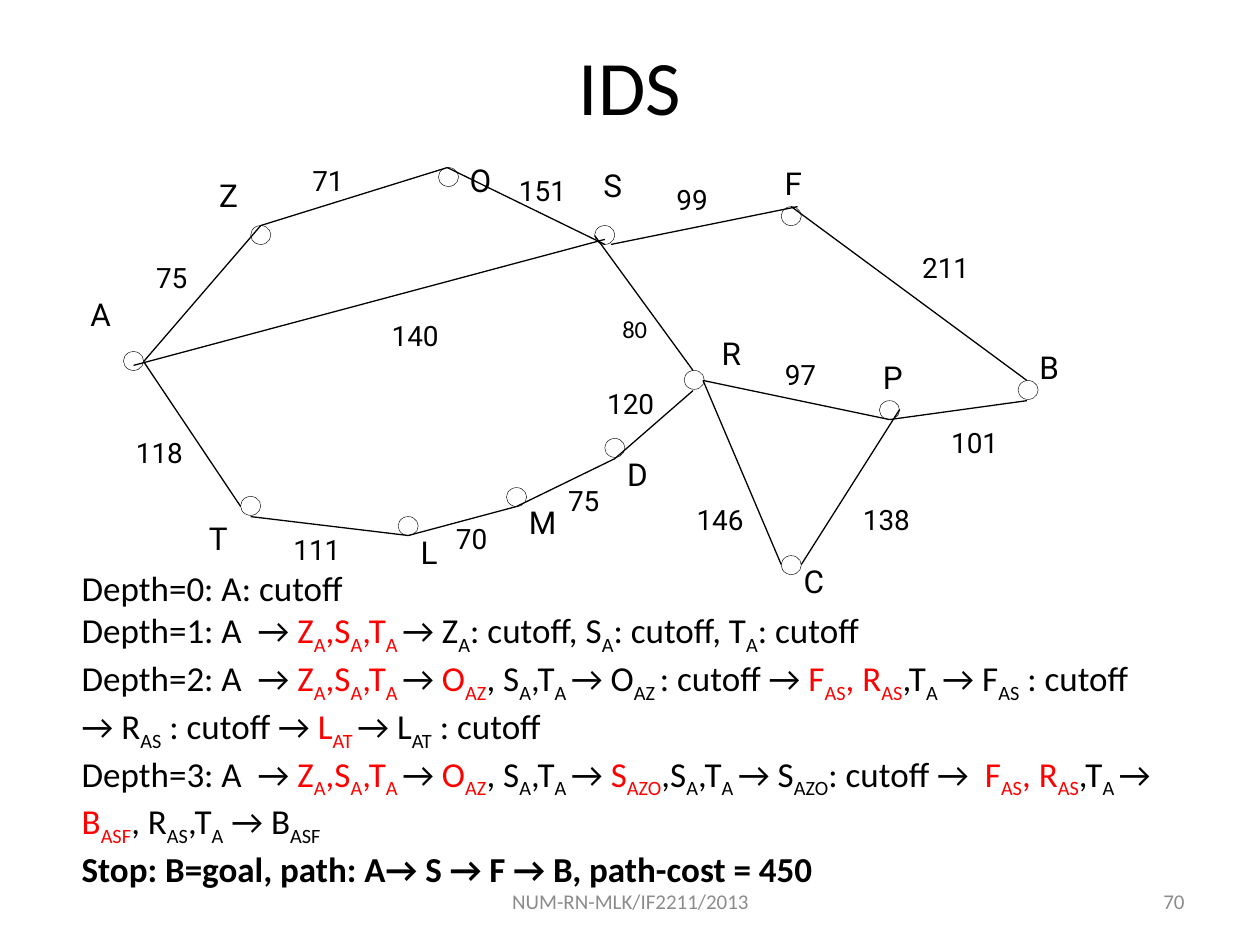
from lxml.etree import SubElement
from pptx import Presentation
from pptx.dml.color import RGBColor
from pptx.enum.shapes import MSO_CONNECTOR, MSO_SHAPE
from pptx.enum.text import MSO_ANCHOR, MSO_AUTO_SIZE, PP_ALIGN
from pptx.oxml.ns import qn
from pptx.util import Emu, Pt

PX = 9144  # 100 px to the inch
BLACK, RED, GREY = "000000", "FF0000", "8C8C8C"

# Node: circle left and top, label left and top
NODES = {
    "A": (98, 279, 62, 229),
    "T": (191, 394, 156, 407),
    "R": (543, 294, 563, 260),
    "C": (620, 441, 628, 441),
    "P": (698, 318, 691, 279),
    "B": (808, 302, 815, 271),
    "F": (620, 164, 613, 125),
    "S": (472, 179, 469, 127),
    "O": (348, 133, 363, 123),
    "Z": (199, 179, 164, 135),
    "D": (480, 348, 488, 356),
    "M": (402, 387, 410, 394),
    "L": (316, 410, 324, 418),
}

# Road: start and end point, distance, distance label left and top
ROADS = [
    (114, 287, 207, 179, "75", 114, 202),
    (207, 179, 355, 133, "71", 238, 125),
    (355, 133, 480, 194, "151", 402, 133),
    (106, 290, 480, 190, "140", 301, 248),
    (706, 333, 815, 318, "101", 745, 333),
    (558, 302, 706, 333, "97", 613, 279),
    (636, 448, 714, 325, "138", 675, 394),
    (620, 448, 558, 302, "146", 543, 394),
    (488, 364, 550, 310, "120", 472, 302),
    (410, 402, 488, 364, "75", 441, 379),
    (324, 425, 410, 402, "70", 352, 409),
    (191, 402, 114, 287, "118", 98, 341),
    (199, 410, 324, 425, "111", 223, 418),
    (550, 294, 472, 187, "80", 484, 244),
    (485, 194, 633, 164, "99", 527, 140),
    (628, 164, 815, 302, "211", 722, 194),
]

# "*" switches red on and off, "~" switches subscript on and off
SEARCH_STEPS = [
    "Depth=0: A: cutoff",
    "Depth=1: A  → *Z~A~,S~A~,T~A *→ Z~A~: cutoff, S~A~: cutoff, T~A~: cutoff",
    "Depth=2: A  → *Z~A~,S~A~,T~A *→ *O~AZ*, S~A~,T~A ~→ O~AZ ~: cutoff → "
    "*F~AS~, R~AS*,T~A ~→ F~AS~ : cutoff → R~AS~ : cutoff → *L~AT *→ L~AT~ : cutoff",
    "Depth=3: A  → *Z~A~,S~A~,T~A *→ *O~AZ*, S~A~,T~A ~→ *S~AZO*,S~A~,T~A ~→ "
    "S~AZO~: cutoff →  *F~AS~, R~AS*,T~A ~→ *B~ASF*, R~AS~,T~A~ → B~ASF",
]
RESULT = "Stop: B=goal, path: A→ S → F → B, path-cost = 450"


def px(*lengths):
    return [Emu(length * PX) for length in lengths]


def color(hex_string):
    return RGBColor.from_string(hex_string)


def add_run(paragraph, text, size, hex_string=BLACK, font="Calibri", bold=False):
    run = paragraph.add_run()
    run.text = text
    run.font.size = Pt(size)
    run.font.name = font
    run.font.bold = bold
    run.font.color.rgb = color(hex_string)
    return run


def add_text_box(slide, left, top, width, height):
    frame = slide.shapes.add_textbox(*px(left, top, width, height)).text_frame
    frame.word_wrap = True
    return frame


def add_title(slide, text):
    title = slide.shapes.title
    title.left, title.top, title.width, title.height = px(50, 17, 900, 101)
    title.text_frame.vertical_anchor = MSO_ANCHOR.MIDDLE
    paragraph = title.text_frame.paragraphs[0]
    paragraph.alignment = PP_ALIGN.CENTER
    add_run(paragraph, text, 44)


def add_footer(slide, text, left, width, alignment):
    frame = add_text_box(slide, left, 695, width, 40)
    frame.vertical_anchor = MSO_ANCHOR.MIDDLE
    frame.paragraphs[0].alignment = alignment
    add_run(frame.paragraphs[0], text, 12, GREY)


def add_marked_runs(paragraph, marked_text):
    """Add one run for each stretch between the red and subscript marks."""
    for part_index, part in enumerate(marked_text.split("*")):
        for piece_index, piece in enumerate(part.split("~")):
            if not piece:
                continue
            run = add_run(paragraph, piece, 20, RED if part_index % 2 else BLACK)
            if piece_index % 2:
                run.font._element.set("baseline", "-25000")


def add_search_steps(slide):
    frame = add_text_box(slide, 55, 445, 877, 246)
    frame.auto_size = MSO_AUTO_SIZE.SHAPE_TO_FIT_TEXT
    paragraph = frame.paragraphs[0]
    for step in SEARCH_STEPS:
        add_marked_runs(paragraph, step)
        paragraph = frame.add_paragraph()
    add_run(paragraph, RESULT, 20, bold=True)


def add_node(slide, left, top):
    circle = slide.shapes.add_shape(MSO_SHAPE.OVAL, *px(left, top, 16, 15))
    circle.shadow.inherit = False
    circle.fill.background()
    circle.line.color.rgb = color(BLACK)
    circle.line.width = Pt(0.25)


def add_road(slide, *ends):
    road = slide.shapes.add_connector(MSO_CONNECTOR.STRAIGHT, *px(*ends))
    road.line.color.rgb = color(BLACK)
    road.line.width = Pt(0.75)
    SubElement(road._element.spPr, qn("a:effectLst"))


def add_label(slide, text, left, top, width, height, size, font="Roboto"):
    frame = add_text_box(slide, left, top, width, height)
    frame.auto_size = MSO_AUTO_SIZE.SHAPE_TO_FIT_TEXT
    add_run(frame.paragraphs[0], text, size, font=font)


def add_graph(slide):
    for left, top, *_ in NODES.values():
        add_node(slide, left, top)
    for *ends, _, _, _ in ROADS:
        add_road(slide, *ends)
    for name, (*_, left, top) in NODES.items():
        add_label(slide, name, left, top, 47, 40, 18)
    for *_, distance, left, top in ROADS:
        if distance == "80":
            add_label(slide, distance, left, top, 42, 33, 14, "Calibri")
        else:
            add_label(slide, distance, left, top, 62, 37, 16)


def main():
    presentation = Presentation()
    presentation.slide_width, presentation.slide_height = px(1000, 750)
    slide = presentation.slides.add_slide(presentation.slide_layouts[5])
    add_footer(slide, "NUM-RN-MLK/IF2211/2013", 342, 317, PP_ALIGN.CENTER)
    add_footer(slide, "70", 717, 233, PP_ALIGN.RIGHT)
    add_title(slide, "IDS")
    add_search_steps(slide)
    add_graph(slide)
    presentation.save("out.pptx")


if __name__ == "__main__":
    main()
